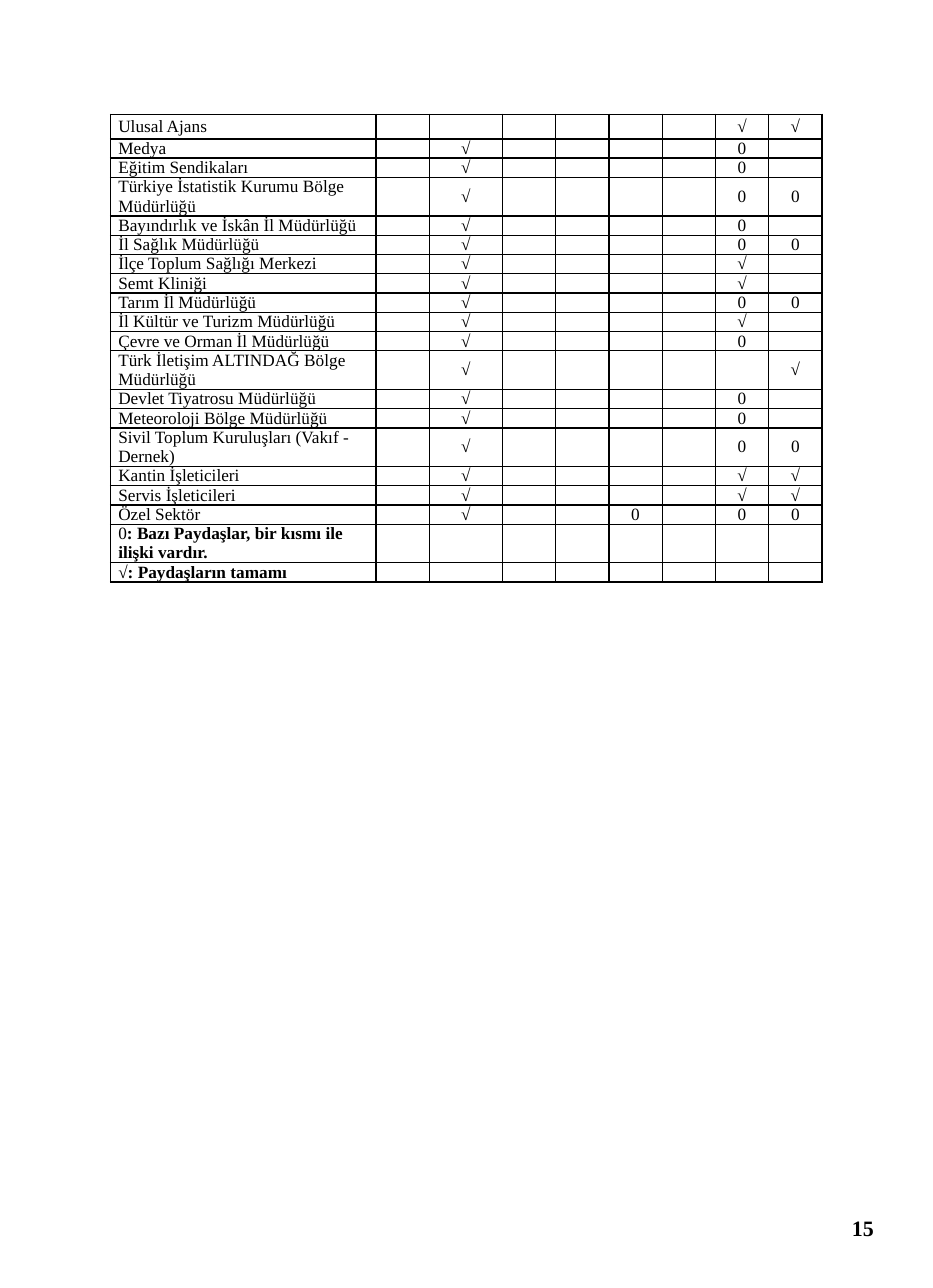
import dataclasses

import lxml.etree
import pptx
import pptx.dml.color
import pptx.enum.text
import pptx.oxml.ns
import pptx.util

Pt = pptx.util.Pt
ALIGN = pptx.enum.text.PP_ALIGN
MIDDLE = pptx.enum.text.MSO_ANCHOR.MIDDLE
FACE = "Times New Roman"
BLACK = "000000"
WHITE = "FFFFFF"
SIZE = 11
LINE = 12.27
WIDTHS = [169.5, 34, 46.7] + [34] * 6


@dataclasses.dataclass
class Row:
    name: str
    marks: str = "........"
    lines: int = 1
    high: float = 0
    bold: str = ""


ROWS = [
    Row("Ulusal Ajans", "......√√", high=15.7),
    Row("Medya", ".√....0."),
    Row("Eğitim Sendikaları", ".√....0."),
    Row("Türkiye İstatistik Kurumu Bölge Müdürlüğü", ".√....00", 2),
    Row("Bayındırlık ve İskân İl Müdürlüğü", ".√....0."),
    Row("İl Sağlık Müdürlüğü", ".√....00"),
    Row("İlçe Toplum Sağlığı Merkezi", ".√....√."),
    Row("Semt Kliniği", ".√....√."),
    Row("Tarım İl Müdürlüğü", ".√....00"),
    Row("İl Kültür ve Turizm Müdürlüğü", ".√....√."),
    Row("Çevre ve Orman İl Müdürlüğü", ".√....0."),
    Row("Türk İletişim ALTINDAĞ Bölge Müdürlüğü", ".√.....√", 2),
    Row("Devlet Tiyatrosu Müdürlüğü", ".√....0."),
    Row("Meteoroloji Bölge Müdürlüğü", ".√....0."),
    Row("Sivil Toplum Kuruluşları (Vakıf - Dernek)", ".√....00", 2),
    Row("Kantin İşleticileri", ".√....√√"),
    Row("Servis İşleticileri", ".√....√√"),
    Row("Özel Sektör", ".√..0.00"),
    Row("0", lines=2, bold=": Bazı Paydaşlar, bir kısmı ile ilişki vardır."),
    Row("", bold="√: Paydaşların tamamı"),
]


def paint(fill, shade: str) -> None:
    fill.solid()
    fill.fore_color.rgb = pptx.dml.color.RGBColor.from_string(shade)


def write(par, text: str, size: float, bold: bool = False) -> None:
    run = par.add_run()
    run.text = text
    run.font.name = FACE
    run.font.size = Pt(size)
    run.font.bold = bold
    paint(run.font.fill, BLACK)


def edge(cell) -> None:
    props = cell._tc.get_or_add_tcPr()
    for spot, side in enumerate("LRTB"):
        line = lxml.etree.Element(pptx.oxml.ns.qn(f"a:ln{side}"), w=str(Pt(1)))
        fill = lxml.etree.SubElement(line, pptx.oxml.ns.qn("a:solidFill"))
        lxml.etree.SubElement(fill, pptx.oxml.ns.qn("a:srgbClr"), val=BLACK)
        props.insert(spot, line)


def dress(cell, parts: list[tuple[str, bool]], align) -> None:
    paint(cell.fill, WHITE)
    edge(cell)
    cell.vertical_anchor = MIDDLE
    cell.margin_left = cell.margin_right = Pt(5)
    cell.margin_top = cell.margin_bottom = Pt(0)
    par = cell.text_frame.paragraphs[0]
    par.alignment = align
    par.line_spacing = Pt(LINE)
    for text, bold in parts:
        if text:
            write(par, text, SIZE, bold)
    end = lxml.etree.SubElement(par._p, pptx.oxml.ns.qn("a:endParaRPr"), sz="800")
    lxml.etree.SubElement(end, pptx.oxml.ns.qn("a:latin"), typeface=FACE)


def draw_grid(slide) -> None:
    highs = [row.high or row.lines * LINE for row in ROWS]
    frame = slide.shapes.add_table(
        len(ROWS), len(WIDTHS), Pt(70.5), Pt(73), Pt(sum(WIDTHS)), Pt(sum(highs))
    )
    grid = frame.table
    grid.first_row = grid.horz_banding = False
    for col, width in zip(grid.columns, WIDTHS):
        col.width = Pt(width)
    for line, high, row in zip(grid.rows, highs, ROWS):
        line.height = Pt(high)
        label, *cells = line.cells
        dress(label, [(row.name, False), (row.bold, True)], ALIGN.LEFT)
        for cell, mark in zip(cells, row.marks):
            dress(cell, [(mark.strip("."), False)], ALIGN.CENTER)


def draw_page(slide) -> None:
    box = slide.shapes.add_textbox(Pt(426.7), Pt(762), Pt(139), Pt(44))
    frame = box.text_frame
    frame.word_wrap = True
    frame.vertical_anchor = MIDDLE
    frame.margin_left = frame.margin_right = Pt(8)
    frame.margin_top = frame.margin_bottom = Pt(4)
    par = frame.paragraphs[0]
    par.alignment = ALIGN.RIGHT
    write(par, "15", 14, True)


def main() -> None:
    deck = pptx.Presentation()
    deck.slide_width = Pt(595.44)
    deck.slide_height = Pt(822.24)
    slide = deck.slides.add_slide(deck.slide_layouts[6])
    paint(slide.background.fill, WHITE)
    draw_page(slide)
    draw_grid(slide)
    deck.save("out.pptx")


if __name__ == "__main__":
    main()
